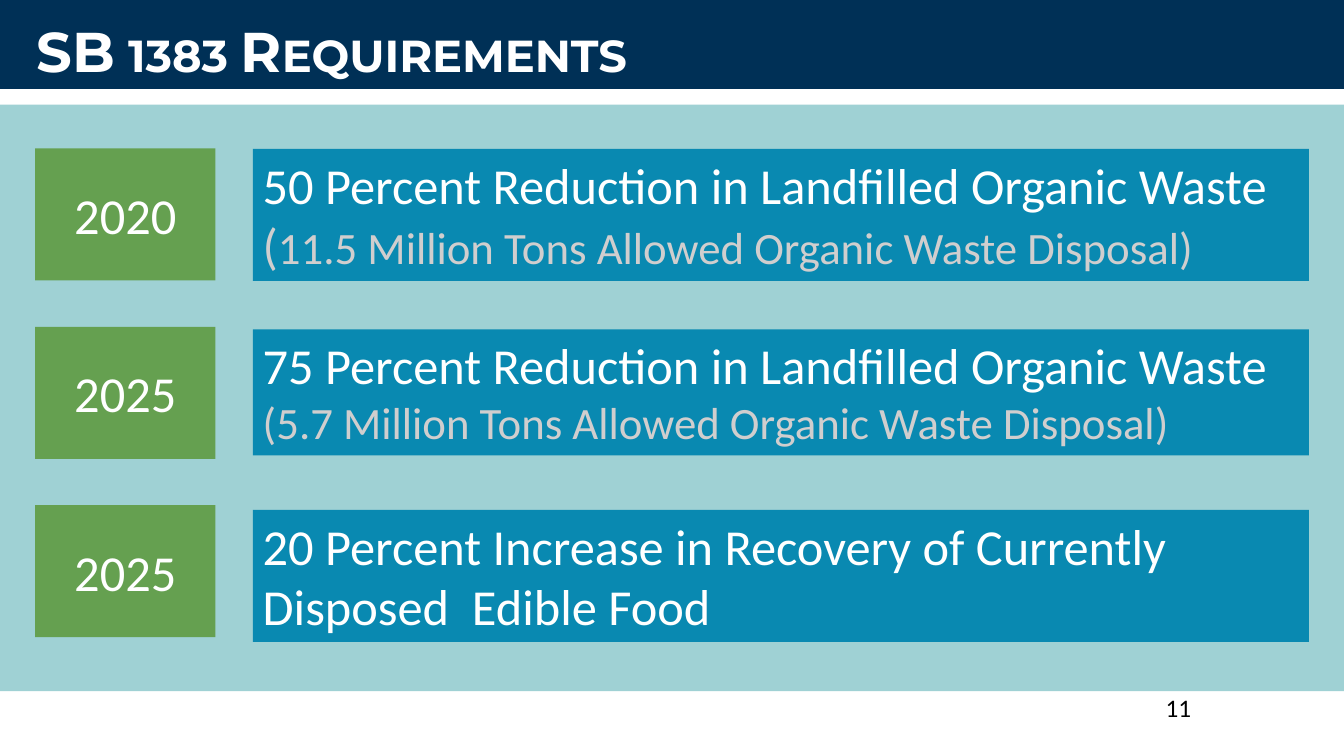
from pptx import Presentation
from pptx.dml.color import RGBColor
from pptx.enum.shapes import MSO_SHAPE
from pptx.enum.text import MSO_ANCHOR, MSO_AUTO_SIZE, PP_ALIGN
from pptx.util import Pt

RECTANGLE = MSO_SHAPE.RECTANGLE
TOP, MIDDLE = MSO_ANCHOR.TOP, MSO_ANCHOR.MIDDLE
LEFT, CENTER = PP_ALIGN.LEFT, PP_ALIGN.CENTER
NO_AUTOFIT = MSO_AUTO_SIZE.NONE

SLIDE_WIDTH, SLIDE_HEIGHT = 960, 540
NAVY, AQUA, GREEN, BLUE = "003056", "9FD1D4", "65A050", "0989B1"
WHITE, BLACK, GREY = "FFFFFF", "000000", "D0CECE"

# Year, headline, runs of the second line as (text, size), height of the box
REQUIREMENTS = [
    ("2020", "50 Percent Reduction in Landfilled Organic Waste",
     [("(", 36), ("11.5 Million Tons Allowed Organic Waste Disposal)", 32)], 94.3),
    ("2025", "75 Percent Reduction in Landfilled Organic Waste",
     [("(5.7 Million Tons Allowed Organic Waste Disposal)", 32)], 90),
    ("2025", "20 Percent Increase in Recovery of Currently Disposed  Edible Food",
     [], 94.3),
]


def color(hex_string):
    return RGBColor.from_string(hex_string)


class SlideBuilder:
    def __init__(self, slide, body_font, title_font):
        self.slide = slide
        self.body_font = body_font
        self.title_font = title_font

    def style(self, paragraph, size, hex_string, font_name=None, align=LEFT):
        paragraph.alignment = align
        paragraph.font.name = font_name or self.body_font
        paragraph.font.size = Pt(size)
        paragraph.font.color.rgb = color(hex_string)

    def frame(self, shape, anchor):
        text_frame = shape.text_frame
        text_frame.word_wrap = True
        text_frame.auto_size = NO_AUTOFIT
        text_frame.vertical_anchor = anchor
        return text_frame

    def rectangle(self, left, top, width, height, fill):
        shape = self.slide.shapes.add_shape(
            RECTANGLE, Pt(left), Pt(top), Pt(width), Pt(height))
        shape.shadow.inherit = False
        shape.fill.solid()
        shape.fill.fore_color.rgb = color(fill)
        shape.line.fill.background()
        return shape

    def title(self, text, left, top, width, height):
        """Place the title in front of everything drawn so far."""
        title = self.slide.shapes.title
        title.left, title.top = Pt(left), Pt(top)
        title.width, title.height = Pt(width), Pt(height)
        self.slide.shapes[-1].element.addnext(title.element)
        paragraph = self.frame(title, TOP).paragraphs[0]
        run = paragraph.add_run()
        run.text = text
        self.style(paragraph, 40, WHITE, self.title_font)
        paragraph.font.bold = True
        run.font.bold = True
        run.font._element.set("cap", "small")

    def year(self, text, left, top, width, height):
        shape = self.rectangle(left, top, width, height, GREEN)
        paragraph = self.frame(shape, MIDDLE).paragraphs[0]
        paragraph.text = text
        self.style(paragraph, 36, WHITE, align=CENTER)

    def requirement(self, headline, detail, left, top, width, height):
        shape = self.rectangle(left, top, width, height, BLUE)
        text_frame = self.frame(shape, TOP)
        paragraph = text_frame.paragraphs[0]
        paragraph.text = headline
        self.style(paragraph, 36, WHITE)
        if detail:
            paragraph = text_frame.add_paragraph()
            for text, size in detail:
                run = paragraph.add_run()
                run.text = text
                run.font.size = Pt(size)
            self.style(paragraph, detail[0][1], GREY)

    def page_number(self, text, left, top, width, height):
        box = self.slide.shapes.add_textbox(
            Pt(left), Pt(top), Pt(width), Pt(height))
        paragraph = self.frame(box, MIDDLE).paragraphs[0]
        paragraph.text = text
        self.style(paragraph, 18, BLACK)


def main():
    presentation = Presentation()
    presentation.slide_width = Pt(SLIDE_WIDTH)
    presentation.slide_height = Pt(SLIDE_HEIGHT)
    title_only = presentation.slide_layouts[5]
    slide = presentation.slides.add_slide(title_only)
    builder = SlideBuilder(slide, "Calibri", "Montserrat")

    builder.rectangle(0, 74.7, SLIDE_WIDTH, 419, AQUA)
    builder.page_number("11", 825.6, 490.6, 134.4, 28.8)
    builder.rectangle(0, 0, SLIDE_WIDTH, 63.5, NAVY)
    builder.title("SB 1383 Requirements", 19.2, 8, 921.6, 55.7)

    for row, (year, headline, detail, height) in enumerate(REQUIREMENTS):
        builder.year(year, 25.2, 106 + row * 127.4, 128.7, 94.3)
        builder.requirement(
            headline, detail, 180.6, 106.4 + row * 128.9, 754.4, height)

    presentation.save("out.pptx")


if __name__ == "__main__":
    main()
